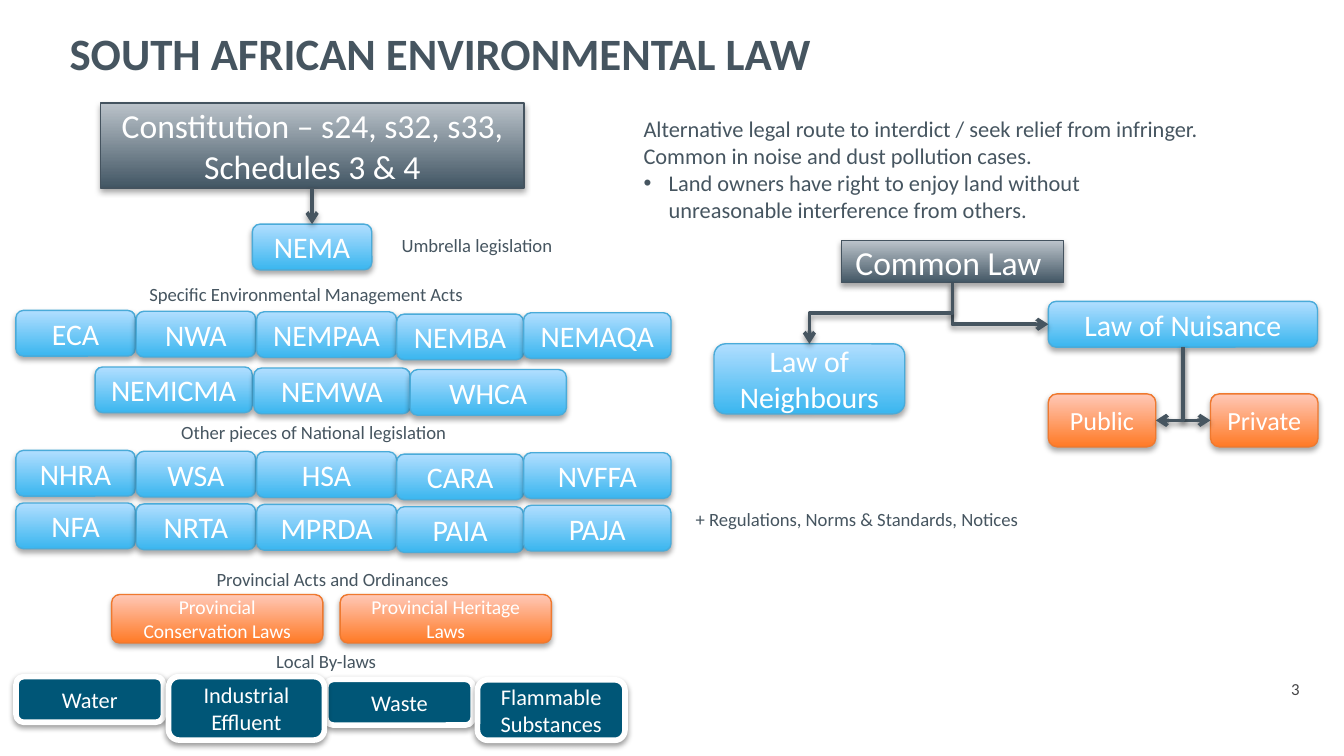
import pptx
import pptx.util
from lxml import etree
from pptx.dml.color import RGBColor
from pptx.enum.shapes import MSO_CONNECTOR, MSO_SHAPE
from pptx.enum.text import MSO_ANCHOR, PP_ALIGN
from pptx.oxml.ns import qn

Pt = pptx.util.Pt

THEME = {
    "font": "Calibri",
    "ink": "465560",
    "number": "454547",
    "white": "FFFFFF",
    "shadow": "000000",
    # fill colours from bottom to top, line colour, line width, shadow opacity, shadow distance
    "grey": (("425664", "BBC3CA"), "44535F", 0.75, 35, 1.8),
    "blue": (("3AB6EF", "B1DEFF"), "4AABD9", 0.75, 35, 1.8),
    "orange": (("FF7A26", "FFC8B7"), "EF792F", 0.75, 35, 1.8),
    "navy": (("005677",), "FFFFFF", 3, 38, 1.6),
    "title": 24, "head": 18, "act": 16, "branch": 14,
    "body": 12, "province": 10.5, "label": 10, "page": 9,
}


def add_text(p, text, size, color, bold=False):
    r = p.add_run()
    r.text = text
    r.font.name = THEME["font"]
    r.font.size = Pt(THEME[size])
    r.font.bold = bold
    r.font.color.rgb = RGBColor.from_string(THEME[color])


def add_shadow(sp, opacity, distance):
    """Append a soft downward shadow; call after fill and line are set."""
    effects = etree.SubElement(sp.element.spPr, qn("a:effectLst"))
    shadow = etree.SubElement(effects, qn("a:outerShdw"), blurRad=str(Pt(3.1)),
                              dist=str(Pt(distance)), dir="5400000", rotWithShape="0")
    color = etree.SubElement(shadow, qn("a:srgbClr"), val=THEME["shadow"])
    etree.SubElement(color, qn("a:alpha"), val=str(opacity * 1000))


prs = pptx.Presentation()
prs.slide_width, prs.slide_height = Pt(720), Pt(405)
s = prs.slides.add_slide(prs.slide_layouts[6])

# Boxes: shape, style, text size, left, top, width, height, text
RECT, ROUND = MSO_SHAPE.RECTANGLE, MSO_SHAPE.ROUNDED_RECTANGLE
BRANCH = MSO_SHAPE.FLOWCHART_ALTERNATE_PROCESS
ACT_HEIGHT = 24.5
boxes = [
    (RECT, "grey", "head", 54, 55.2, 226.8, 45.5, "Constitution – s24, s32, s33, Schedules 3 & 4"),
    (RECT, "grey", "head", 450.7, 129, 119, 22.5, "Common Law "),
    (ROUND, "blue", "act", 561.6, 161.5, 144.2, ACT_HEIGHT, "Law of Nuisance"),
    (ROUND, "blue", "act", 382.5, 184.2, 102.2, 37.5, "Law of Neighbours"),
    (BRANCH, "orange", "branch", 561.6, 211, 57.6, 28.4, "Public"),
    (BRANCH, "orange", "branch", 648.5, 211, 57.6, 28.4, "Private"),
    (ROUND, "blue", "act", 135.2, 120.1, 64, ACT_HEIGHT, "NEMA"),
    (ROUND, "blue", "act", 51, 196.6, 84.2, ACT_HEIGHT, "NEMICMA"),
    (ROUND, "blue", "act", 136, 197.2, 83.7, ACT_HEIGHT, "NEMWA"),
    (ROUND, "blue", "act", 219.7, 198, 83.7, ACT_HEIGHT, "WHCA"),
    (ROUND, "orange", "province", 59.8, 318.5, 113.2, 26, "Provincial Conservation Laws"),
    (ROUND, "orange", "province", 182.2, 318.5, 113.2, 26, "Provincial Heritage Laws"),
    (ROUND, "navy", "body", 8.6, 362.5, 79, 24.5, "Water"),
    (ROUND, "navy", "body", 174.5, 364, 79, 24.5, "Waste"),
    (ROUND, "navy", "body", 90.3, 362.5, 83.5, 34, "Industrial Effluent"),
    (ROUND, "navy", "body", 255.8, 364.2, 79, 32.4, "Flammable Substances"),
]

# Five-column grid of acts; each column sits slightly lower than the first
columns = [(8.5, 64, 0), (73, 64, 0.5), (137.5, 75, 0.75), (212.5, 68, 2), (280.5, 79, 1.25)]
act_rows = [
    (166.3, ("ECA", "NWA", "NEMPAA", "NEMBA", "NEMAQA")),
    (241.3, ("NHRA", "WSA", "HSA", "CARA", "NVFFA")),
    (269.5, ("NFA", "NRTA", "MPRDA", "PAIA", "PAJA")),
]
for top, acts in act_rows:
    for (left, width, drop), act in zip(columns, acts):
        boxes.append((ROUND, "blue", "act", left, top + drop, width, ACT_HEIGHT, act))

for shape, style, size, left, top, width, height, text in boxes:
    fills, line, line_width, opacity, distance = THEME[style]
    sp = s.shapes.add_shape(shape, Pt(left), Pt(top), Pt(width), Pt(height))
    if len(fills) == 1:
        sp.fill.solid()
        sp.fill.fore_color.rgb = RGBColor.from_string(fills[0])
    else:
        sp.fill.gradient()
        sp.fill.gradient_angle = 90
        for stop, color in zip(sp.fill.gradient_stops, fills):
            stop.color.rgb = RGBColor.from_string(color)
    sp.line.color.rgb = RGBColor.from_string(line)
    sp.line.width = Pt(line_width)
    add_shadow(sp, opacity, distance)
    tf = sp.text_frame
    tf.word_wrap = True
    tf.vertical_anchor = MSO_ANCHOR.MIDDLE
    p = tf.paragraphs[0]
    p.alignment = PP_ALIGN.CENTER
    add_text(p, text, size, "white")

# Arrows: geometry, start x, start y, end x, end y
arrows = [
    ("line", 167.2, 100.7, 167.2, 120.1),
    ("bentConnector2", 510.2, 151.5, 561.6, 173.7),
    ("bentConnector3", 510.2, 151.5, 433.6, 184.2),
    ("bentConnector2", 633.7, 186, 648.5, 225.2),
    ("bentConnector2", 633.7, 186, 619.2, 225.2),
]
for geometry, x1, y1, x2, y2 in arrows:
    if geometry == "line":
        cn = s.shapes.add_connector(MSO_CONNECTOR.STRAIGHT, Pt(x1), Pt(y1), Pt(x2), Pt(y2))
    else:
        # An elbow that leaves downwards is a quarter-turned one, so its sides swap
        mid_x, mid_y = (x1 + x2) / 2, (y1 + y2) / 2
        side = 1 if x2 > x1 else -1
        half_w, half_h = side * (y2 - y1) / 2, abs(x2 - x1) / 2
        cn = s.shapes.add_connector(MSO_CONNECTOR.ELBOW, Pt(mid_x + half_w), Pt(mid_y - half_h),
                                    Pt(mid_x - half_w), Pt(mid_y + half_h))
        spPr = cn.element.spPr
        spPr.find(qn("a:xfrm")).set("rot", str((270 if side > 0 else 90) * 60000))
        spPr.find(qn("a:prstGeom")).set("prst", geometry)
    cn.line.color.rgb = RGBColor.from_string(THEME["ink"])
    cn.line.width = Pt(2)
    etree.SubElement(cn.element.spPr.find(qn("a:ln")), qn("a:tailEnd"), type="arrow")
    add_shadow(cn, 38, 1.6)

# Free text: size, colour, left, top, width, height, paragraphs
texts = [
    ("title", "ink", 30.2, 6.5, 647.3, 43.2, ["SOUTH AFRICAN ENVIRONMENTAL LAW"]),
    ("page", "number", 671, 360, 46, 17.3, ["3"]),
    ("body", "ink", 337.7, 58.3, 311.8, 80, [
        "Alternative legal route to interdict / seek relief from infringer.",
        "Common in noise and dust pollution cases.",
        "Land owners have right to enjoy land without unreasonable interference from others.",
    ]),
    ("label", "ink", 208.1, 121.7, 96.5, 19.4, ["Umbrella legislation"]),
    ("label", "ink", 72.9, 147.9, 188.6, 19.4, ["Specific Environmental Management Acts"]),
    ("label", "ink", 90, 221.9, 188.6, 19.4, ["Other pieces of National legislation"]),
    ("label", "ink", 365.6, 268.6, 188.6, 19.4, ["+ Regulations, Norms & Standards, Notices"]),
    ("label", "ink", 108.9, 300.5, 145.4, 19.4, ["Provincial Acts and Ordinances"]),
    ("label", "ink", 140.9, 344.7, 74.2, 19.4, ["Local By-laws"]),
]
for size, color, left, top, width, height, paragraphs in texts:
    tf = s.shapes.add_textbox(Pt(left), Pt(top), Pt(width), Pt(height)).text_frame
    tf.word_wrap = True
    if size == "title":
        tf.vertical_anchor = MSO_ANCHOR.MIDDLE
    for i, text in enumerate(paragraphs):
        p = tf.add_paragraph() if i else tf.paragraphs[0]
        if size == "page":
            p.alignment = PP_ALIGN.CENTER
        if text.startswith("Land owners"):
            pPr = p._p.get_or_add_pPr()
            pPr.set("marL", str(Pt(13.5)))
            pPr.set("indent", str(-Pt(13.5)))
            etree.SubElement(pPr, qn("a:buFont"), typeface="Arial")
            etree.SubElement(pPr, qn("a:buChar"), char="•")
        add_text(p, text, size, color, bold=size == "title")

prs.save("out.pptx")
